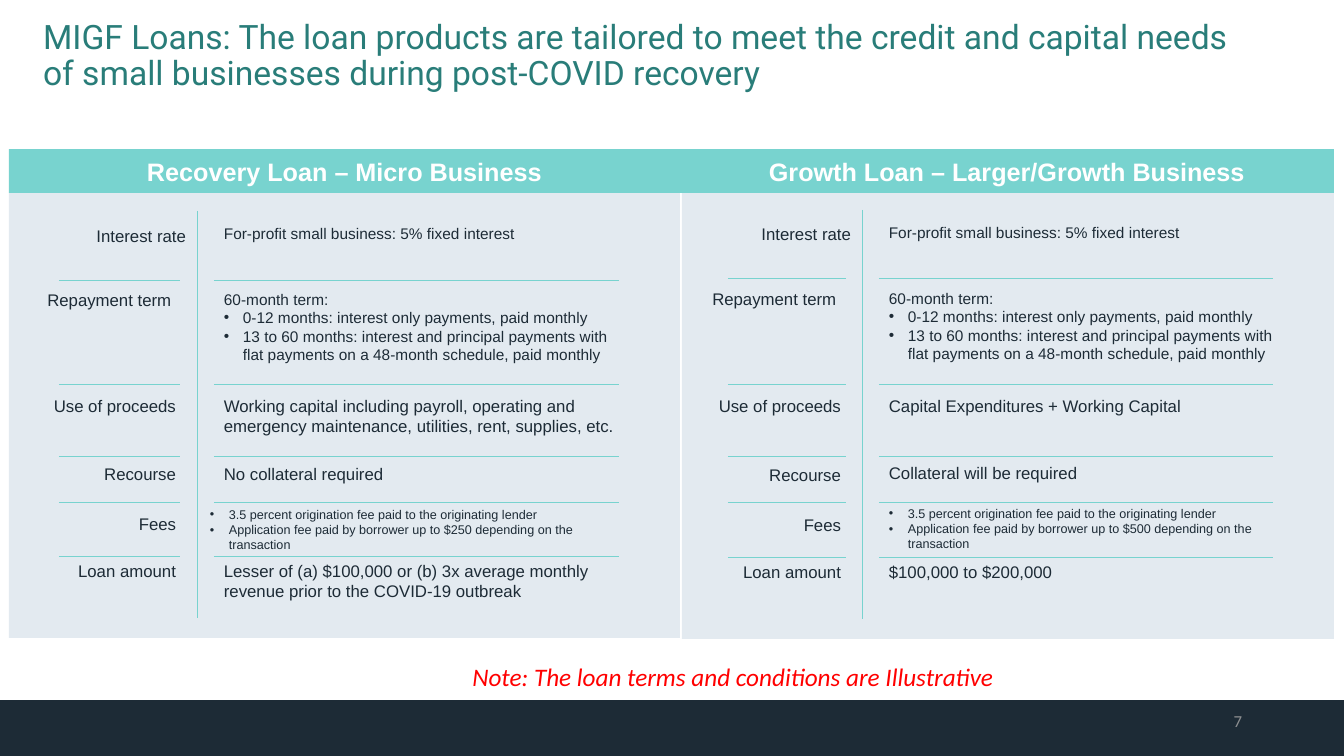
from dataclasses import dataclass
from lxml.etree import SubElement
from pptx import Presentation
from pptx.dml.color import RGBColor
from pptx.enum.shapes import MSO_CONNECTOR, MSO_SHAPE
from pptx.enum.text import MSO_ANCHOR, MSO_AUTO_SIZE, PP_ALIGN
from pptx.oxml.ns import qn
from pptx.util import Pt

TITLE = ("MIGF Loans: The loan products are tailored to meet the credit and "
         "capital needs of small businesses during post-COVID recovery")
NOTE = "Note: The loan terms and conditions are Illustrative"
PAGE = "7"
LABELS = ["Interest rate", "Repayment term ", "Use of proceeds",
          "Recourse", "Fees", "Loan amount"]
RATE = ["For-profit small business: 5% fixed interest"]
TERM = ["60-month term:",
        "• 0-12 months: interest only payments, paid monthly",
        "• 13 to 60 months: interest and principal payments with flat "
        "payments on a 48-month schedule, paid monthly"]


def fees(cap):
    return ["• 3.5 percent origination fee paid to the originating lender",
            f"• Application fee paid by borrower up to {cap} depending on the transaction"]


CARDS = [
    dict(head="Recovery Loan – Micro Business",
         bar=(9, 149, 671, 44), body=(9, 193, 671, 445),
         stem=(197, 211, 618), rules=(280, 384, 456, 502, 556),
         short=(59, 180), long=(214, 619),
         label=(0, 186), tops=(221, 285, 391, 459, 509, 556),
         value=(214, 412), starts=(219, 285, 391, 459, 502, 556), fee=-14,
         texts=[RATE, TERM,
                ["Working capital including payroll, operating and emergency "
                 "maintenance, utilities, rent, supplies, etc."],
                ["No collateral required"], fees("$250"),
                ["Lesser of (a) $100,000 or (b) 3x average monthly revenue "
                 "prior to the COVID-19 outbreak"]]),
    dict(head="Growth Loan – Larger/Growth Business",
         bar=(680, 149, 654, 44), body=(682, 190, 652, 449),
         stem=(862, 210, 619), rules=(278, 384, 456, 502, 557),
         short=(728, 846), long=(879, 1273),
         label=(670, 181), tops=(219, 284, 391, 460, 510, 557),
         value=(879, 417), starts=(218, 284, 391, 458, 501, 557), fee=0,
         texts=[RATE, TERM, ["Capital Expenditures + Working Capital"],
                ["Collateral will be required"], fees("$500"),
                ["$100,000 to $200,000"]]),
]


@dataclass(frozen=True)
class Theme:
    dark: str = "1D2B36"
    teal: str = "78D3CF"
    pale: str = "E3EAF0"
    white: str = "FFFFFF"
    title: str = "297D79"
    red: str = "FF0000"
    gray: str = "8D8F91"
    sans: str = "Arial"
    alt: str = "Calibri"
    top: str = "Roboto"
    big: int = 24
    mid: int = 18
    base: int = 12
    sizes: tuple = (11, 11, 12, 12, 9, 12)
    line: float = 0.5


T = Theme()
SCALE = 914400 / 100.8
INDENT = 19


def px(n):
    return round(n * SCALE)


def place(box):
    return [px(n) for n in box]


def style(para, size, color, face=T.sans, align=PP_ALIGN.LEFT):
    para.alignment = align
    font = para.font
    font.size, font.name = Pt(size), face
    font.color.rgb = RGBColor.from_string(color)
    return font


def rect(shapes, box, color):
    shape = shapes.add_shape(MSO_SHAPE.RECTANGLE, *place(box))
    shape.shadow.inherit = False
    shape.fill.solid()
    shape.fill.fore_color.rgb = RGBColor.from_string(color)
    shape.line.fill.background()
    return shape


def rule(shapes, x1, y1, x2, y2):
    line = shapes.add_connector(MSO_CONNECTOR.STRAIGHT, *place((x1, y1, x2, y2)))
    line.line.width = Pt(T.line)
    line.line.color.rgb = RGBColor.from_string(T.teal)
    SubElement(line._element.spPr, qn("a:effectLst"))


def bullet(para):
    props = para._p.get_or_add_pPr()
    props.set("marL", str(px(INDENT)))
    props.set("indent", str(-px(INDENT)))
    SubElement(props, qn("a:buFont"), typeface=T.sans)
    SubElement(props, qn("a:buChar"), char="•")


def write(shapes, box, lines, size, color=T.dark, face=T.sans, align=PP_ALIGN.LEFT):
    frame = shapes.add_textbox(*place(box)).text_frame
    frame.word_wrap = True
    for i, line in enumerate(lines):
        para = frame.add_paragraph() if i else frame.paragraphs[0]
        para.text = line.removeprefix("• ")
        if line.startswith("• "):
            bullet(para)
        style(para, size, color, face, align)
    return frame


def card(slide, c):
    shapes = slide.shapes.add_group_shape().shapes
    rect(shapes, c["body"], T.pale)
    x, top, end = c["stem"]
    rule(shapes, x, top, x, end)
    for y in c["rules"]:
        for left, right in (c["short"], c["long"]):
            rule(shapes, left, y, right, y)
    rows = zip(LABELS, c["texts"], c["tops"], c["starts"], T.sizes)
    for i, (name, lines, y, start, size) in enumerate(rows):
        left, wide = c["label"]
        shift = 0 if i else 10
        write(shapes, (left + shift, y, wide, 31), [name], T.base, align=PP_ALIGN.RIGHT)
        left, wide = c["value"]
        shift = c["fee"] if name == "Fees" else 0
        high = {1: 30, 2: 57, 3: 86}[len(lines)]
        write(shapes, (left + shift, start, wide, high), lines, size)
    frame = rect(slide.shapes, c["bar"], T.teal).text_frame
    frame.vertical_anchor = MSO_ANCHOR.MIDDLE
    para = frame.paragraphs[0]
    para.text = c["head"]
    style(para, T.mid, T.white, align=PP_ALIGN.CENTER).bold = True


def main():
    deck = Presentation()
    deck.slide_width, deck.slide_height = px(1344), px(756)
    slide = deck.slides.add_slide(deck.slide_layouts[5])
    title = slide.shapes.title
    title.left, title.top, title.width, title.height = place((33, 15, 1219, 51))
    frame = title.text_frame
    frame.text = TITLE
    frame.word_wrap = True
    frame.auto_size = MSO_AUTO_SIZE.NONE
    frame.vertical_anchor = MSO_ANCHOR.TOP
    para = frame.paragraphs[0]
    para.line_spacing = 0.9
    style(para, T.big, T.title, T.top)
    rect(slide.shapes, (0, 700, 1344, 56), T.dark)
    page = write(slide.shapes, (950, 701, 302, 40), [PAGE], T.base,
                 T.gray, T.alt, PP_ALIGN.RIGHT)
    page.vertical_anchor = MSO_ANCHOR.MIDDLE
    for c in CARDS:
        card(slide, c)
    note = write(slide.shapes, (122, 656, 1222, 40), [NOTE], T.mid,
                 T.red, T.alt, PP_ALIGN.CENTER)
    note.paragraphs[0].font.italic = True
    deck.save("out.pptx")


if __name__ == "__main__":
    main()
